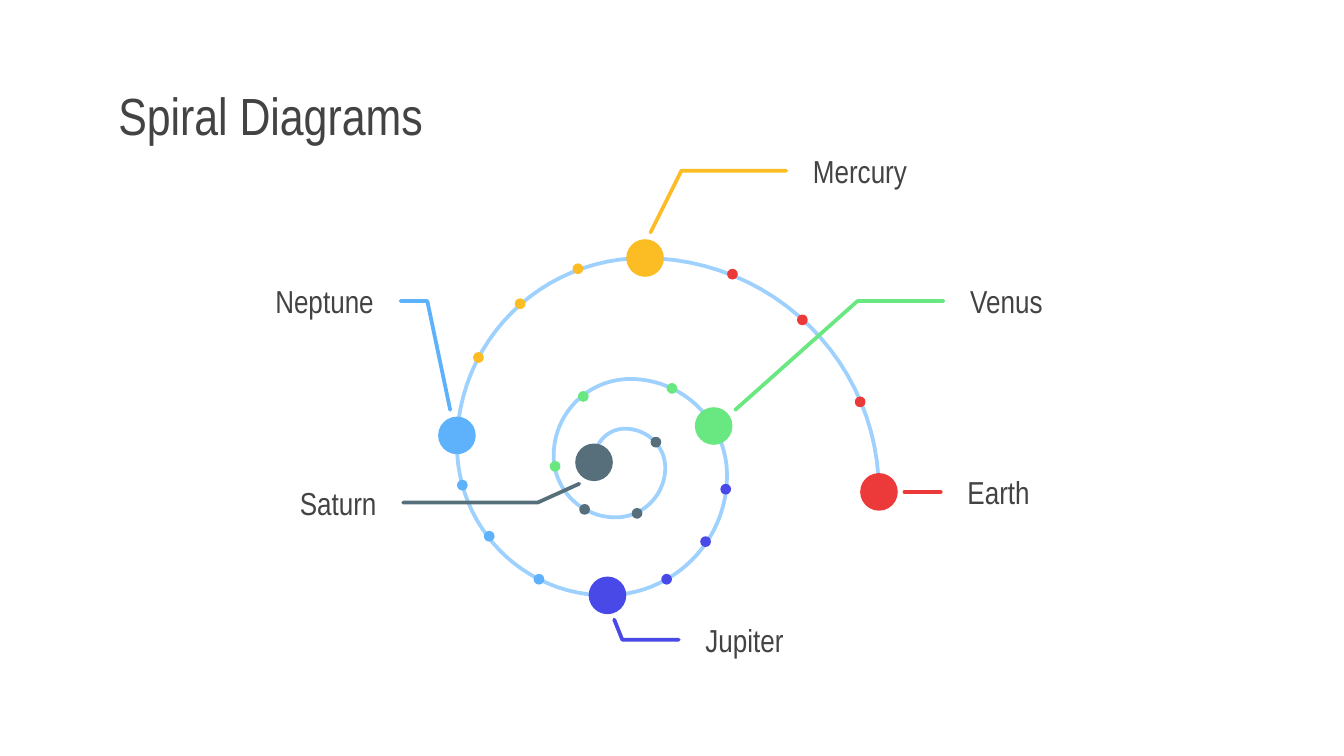
from dataclasses import dataclass
from math import cos, pi, sin

from pptx import Presentation
from pptx.dml.color import RGBColor
from pptx.enum.shapes import MSO_SHAPE
from pptx.enum.text import MSO_ANCHOR, PP_ALIGN
from pptx.util import Inches, Pt

FONT = "Arial Narrow"
DARK = RGBColor(0x43, 0x43, 0x43)
PALE_BLUE = RGBColor(0x9E, 0xD1, 0xFD)
YELLOW = RGBColor(0xFC, 0xBD, 0x24)
GREEN = RGBColor(0x69, 0xE7, 0x81)
RED = RGBColor(0xEC, 0x3A, 0x3B)
BLUE = RGBColor(0x5E, 0xB2, 0xFC)
SLATE = RGBColor(0x57, 0x6F, 0x7A)
INDIGO = RGBColor(0x49, 0x49, 0xE7)

SLIDE_WIDTH = 10
SLIDE_HEIGHT = SLIDE_WIDTH * 9 / 16
DOT_SIZE, PLANET_SIZE = 0.08, 0.28
LABEL_WIDTH, LABEL_HEIGHT, LABEL_GAP = 1.45, 0.4, 0.1
ARC_STEPS = 24

# Outermost points of the spiral, joined by quarter turns
SPIRAL_TURNS = [
    (5.14, 2.66), (3.39, 0.92), (2, 2.31), (3.11, 3.43), (4.01, 2.54), (3.29, 1.82),
    (2.72, 2.39), (3.18, 2.85), (3.55, 2.48), (3.25, 2.19), (3.02, 2.43),
]


@dataclass
class Planet:
    name: str
    color: RGBColor
    center: tuple
    leader: list
    dots: list


# Positions are inches from the corner of the diagram
PLANETS = [
    Planet("Mercury", YELLOW, (3.4, 0.92), [(3.44, 0.73), (3.67, 0.27), (4.45, 0.27)],
           [(2.47, 1.26), (2.16, 1.66), (2.9, 1)]),
    Planet("Venus", GREEN, (3.91, 2.17), [(4.07, 2.05), (4.98, 1.24), (5.62, 1.24)],
           [(2.94, 1.95), (3.6, 1.89), (2.73, 2.47)]),
    Planet("Earth", RED, (5.14, 2.66), [(5.33, 2.66), (5.6, 2.66)],
           [(4.57, 1.38), (4.05, 1.04), (5, 1.99)]),
    Planet("Neptune", BLUE, (2, 2.24), [(1.95, 2.05), (1.78, 1.24), (1.58, 1.24)],
           [(2.24, 2.99), (2.61, 3.31), (2.04, 2.61)]),
    Planet("Saturn", SLATE, (3.02, 2.44), [(2.91, 2.6), (2.6, 2.74), (1.6, 2.74)],
           [(3.34, 2.82), (2.95, 2.79), (3.48, 2.29)]),
    Planet("Jupiter", INDIGO, (3.12, 3.43), [(3.17, 3.61), (3.23, 3.76), (3.65, 3.76)],
           [(3.85, 3.03), (3.56, 3.31), (4, 2.64)]),
]


def write_text(shape, text, size, color=DARK, align=PP_ALIGN.LEFT):
    frame = shape.text_frame
    frame.word_wrap = True
    frame.vertical_anchor = MSO_ANCHOR.MIDDLE
    frame.margin_left = frame.margin_right = Inches(0.1)
    frame.margin_top = frame.margin_bottom = Inches(0.1)
    paragraph = frame.paragraphs[0]
    paragraph.alignment = align
    run = paragraph.add_run()
    run.text = text
    run.font.name = FONT
    run.font.size = Pt(size)
    run.font.color.rgb = color


def add_path(shapes, origin, points, color, width):
    """Draw an open line with round ends through the points."""
    left, top = origin
    vertices = [(Inches(left + x), Inches(top + y)) for x, y in points]
    builder = shapes.build_freeform(*vertices[0])
    builder.add_line_segments(vertices[1:], close=False)
    shape = builder.convert_to_shape()
    shape.shadow.inherit = False
    shape.fill.background()
    shape.line.color.rgb = color
    shape.line.width = Pt(width)
    shape.line._get_or_add_ln().set("cap", "rnd")


def add_circle(shapes, origin, center, diameter, color):
    left, top = (start + middle - diameter / 2 for start, middle in zip(origin, center))
    circle = shapes.add_shape(MSO_SHAPE.OVAL, Inches(left), Inches(top),
                              Inches(diameter), Inches(diameter))
    circle.shadow.inherit = False
    circle.fill.solid()
    circle.fill.fore_color.rgb = color
    circle.line.fill.background()


def spiral_points():
    """Quarter turns that leave upright and level by turns."""
    points = [SPIRAL_TURNS[0]]
    for index, (start, end) in enumerate(zip(SPIRAL_TURNS, SPIRAL_TURNS[1:])):
        (x1, y1), (x2, y2) = start, end
        for step in range(1, ARC_STEPS + 1):
            angle = step / ARC_STEPS * pi / 2
            fall, rise = cos(angle), sin(angle)
            if index % 2 == 0:
                points.append((x2 + (x1 - x2) * fall, y1 + (y2 - y1) * rise))
            else:
                points.append((x1 + (x2 - x1) * rise, y2 + (y1 - y2) * fall))
    return points


def add_title(slide, left, top, width, height):
    title = slide.shapes.title
    title.left, title.top = Inches(left), Inches(top)
    title.width, title.height = Inches(width), Inches(height)
    write_text(title, "Spiral Diagrams", size=28)


def add_spiral(slide, left, top):
    shapes = slide.shapes.add_group_shape().shapes
    add_path(shapes, (left, top), spiral_points(), PALE_BLUE, width=2)
    for planet in PLANETS:
        for dot in planet.dots:
            add_circle(shapes, (left, top), dot, DOT_SIZE, planet.color)


def add_planet(slide, left, top, planet):
    shapes = slide.shapes.add_group_shape().shapes
    add_path(shapes, (left, top), planet.leader, planet.color, width=2)
    add_circle(shapes, (left, top), planet.center, PLANET_SIZE, planet.color)

    # The label continues outward from the end of its leader
    end_x, end_y = planet.leader[-1]
    if end_x > planet.center[0]:
        label_x, align = end_x + LABEL_GAP, PP_ALIGN.LEFT
    else:
        label_x, align = end_x - LABEL_GAP - LABEL_WIDTH, PP_ALIGN.RIGHT
    label = shapes.add_textbox(Inches(left + label_x), Inches(top + end_y - LABEL_HEIGHT / 2),
                               Inches(LABEL_WIDTH), Inches(LABEL_HEIGHT))
    write_text(label, planet.name, size=17, align=align)


def main():
    presentation = Presentation()
    presentation.slide_width = Inches(SLIDE_WIDTH)
    presentation.slide_height = Inches(SLIDE_HEIGHT)
    slide = presentation.slides.add_slide(presentation.slide_layouts[5])
    add_title(slide, 0.78, 0.59, 8.45, 0.53)
    diagram_left, diagram_top = 1.4, 1
    add_spiral(slide, diagram_left, diagram_top)
    for planet in PLANETS:
        add_planet(slide, diagram_left, diagram_top, planet)
    presentation.save("out.pptx")


if __name__ == "__main__":
    main()
